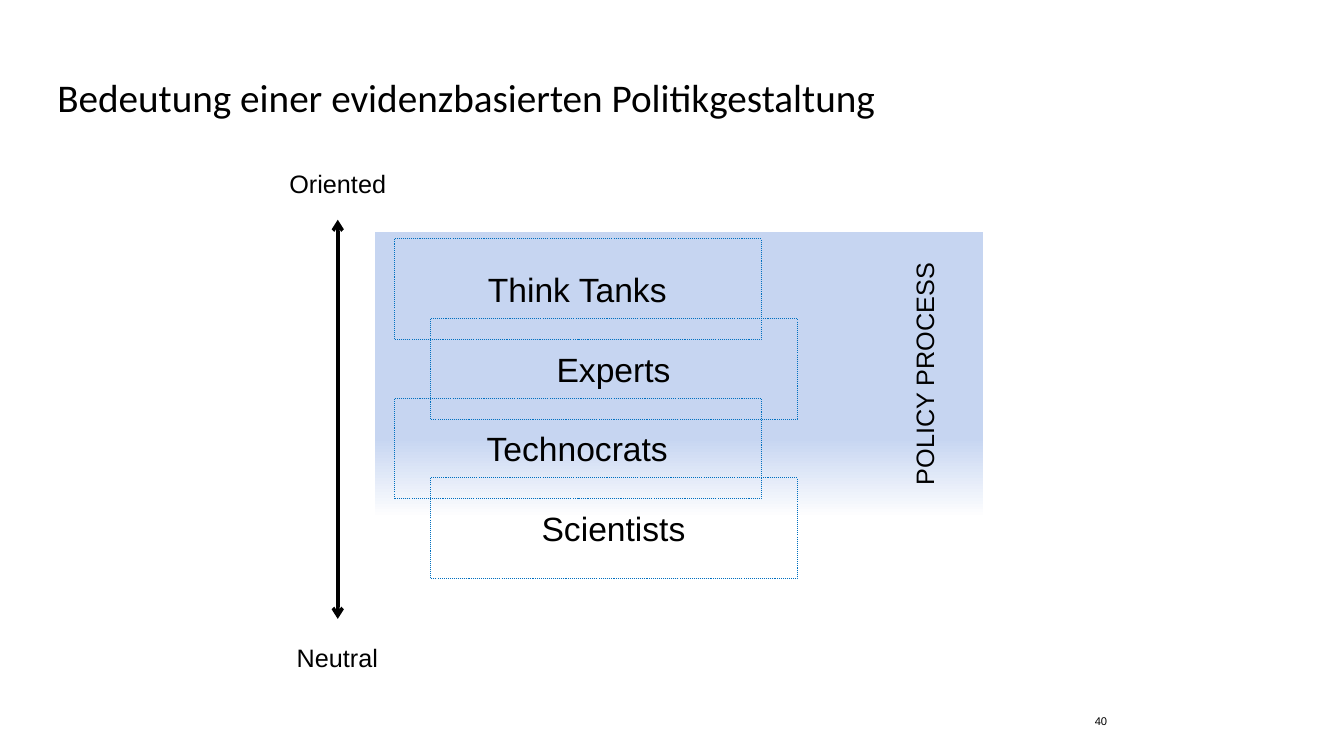
from lxml import etree
from pptx import Presentation
from pptx.dml.color import RGBColor
from pptx.enum.dml import MSO_LINE
from pptx.enum.shapes import MSO_CONNECTOR, MSO_SHAPE
from pptx.enum.text import MSO_ANCHOR, PP_ALIGN
from pptx.oxml.ns import qn
from pptx.util import Inches, Pt

TOP, MIDDLE = MSO_ANCHOR.TOP, MSO_ANCHOR.MIDDLE
LEFT, CENTER = PP_ALIGN.LEFT, PP_ALIGN.CENTER
RECT, STRAIGHT, DOTS = MSO_SHAPE.RECTANGLE, MSO_CONNECTOR.STRAIGHT, MSO_LINE.ROUND_DOT

SLIDE_SIZE = (13.33, 7.5)
TITLE = "Bedeutung einer evidenzbasierten Politikgestaltung"
PAGE_NUMBER = "40"
ACTORS = ["Think Tanks", "Experts", "Technocrats", "Scientists"]
LABELS = [
    ("Oriented", (2.21, 1.67, 2.29, 0.46), 0),
    ("Neutral", (2.64, 6.37, 1.42, 0.46), 0),
    ("POLICY PROCESS", (7.84, 3.51, 2.74, 0.39), 270),
]
PROCESS_AREA = (3.72, 2.3, 6.03, 3.19)
PROCESS_FADE = [(0.11, "FFFFFF"), (0.36, "C6D5F1")]
AXIS = (3.35, 2.18, 3.35, 6.14)
ACTOR_COLUMNS = (3.91, 4.27)
ACTOR_TOP, ACTOR_STEP = 2.37, 0.79
ACTOR_SIZE = (3.64, 1)
BLACK, BLUE = "000000", "0070C0"
LABEL_INSETS = (0.15, 0, 0.16, 0)
BOX_INSETS = (0.1, 0.05, 0.1, 0.05)


def rgb(color):
    """Turn a hex string into a colour."""
    return RGBColor.from_string(color)


def inches(values):
    """Turn numbers into lengths."""
    return [Inches(v) for v in values]


def write(sp, text, size=18, font="Arial", align=CENTER, anchor=TOP,
          insets=LABEL_INSETS, before=5):
    """Fill a shape with one formatted paragraph."""
    tf = sp.text_frame
    tf.word_wrap = True
    tf.vertical_anchor = anchor
    tf.margin_left, tf.margin_top, tf.margin_right, tf.margin_bottom = inches(insets)
    p = tf.paragraphs[0]
    p.alignment = align
    p.space_before = Pt(before)
    r = p.add_run()
    r.text = text
    r.font.size, r.font.name = Pt(size), font
    r.font.color.rgb = rgb(BLACK)


def add_rect(s, box):
    """Add a rectangle without shadow."""
    sp = s.shapes.add_shape(RECT, *inches(box))
    sp.shadow.inherit = False
    return sp


def add_process_area(s):
    """Add the area that fades out towards the bottom."""
    sp = add_rect(s, PROCESS_AREA)
    sp.line.fill.background()
    sp.fill.gradient()
    sp.fill.gradient_angle = 90
    for stop, (position, color) in zip(sp.fill.gradient_stops, PROCESS_FADE):
        stop.position = position
        stop.color.rgb = rgb(color)


def add_axis(s):
    """Add the double-headed vertical axis."""
    line = s.shapes.add_connector(STRAIGHT, *inches(AXIS))
    line.line.color.rgb = rgb(BLACK)
    line.line.width = Pt(2.5)
    ln = line.line._get_or_add_ln()
    for end in ("a:headEnd", "a:tailEnd"):
        etree.SubElement(ln, qn(end), type="arrow")
    etree.SubElement(ln.getparent(), qn("a:effectLst"))


def add_actor(s, index, name):
    """Add one dotted box of the staggered stack."""
    left = ACTOR_COLUMNS[index % len(ACTOR_COLUMNS)]
    sp = add_rect(s, (left, ACTOR_TOP + index * ACTOR_STEP, *ACTOR_SIZE))
    sp.fill.background()
    sp.line.color.rgb = rgb(BLUE)
    sp.line.width = Pt(0.75)
    sp.line.dash_style = DOTS
    write(sp, name, size=24, anchor=MIDDLE)


def main():
    """Build and save the slide."""
    prs = Presentation()
    prs.slide_width, prs.slide_height = inches(SLIDE_SIZE)
    s = prs.slides.add_slide(prs.slide_layouts[6])
    number = s.shapes.add_textbox(*inches((9.42, 6.95, 3, 0.4)))
    write(number, PAGE_NUMBER, size=8, anchor=MIDDLE, insets=BOX_INSETS, before=0)
    add_process_area(s)
    add_axis(s)
    for text, box, rotation in LABELS:
        label = s.shapes.add_textbox(*inches(box))
        label.rotation = rotation
        write(label, text)
    for index, name in enumerate(ACTORS):
        add_actor(s, index, name)
    title = s.shapes.add_textbox(*inches((0.47, 0.68, 12.39, 1.06)))
    write(title, TITLE, size=28, font="Calibri", align=LEFT, insets=BOX_INSETS, before=0)
    prs.save("out.pptx")


if __name__ == "__main__":
    main()
